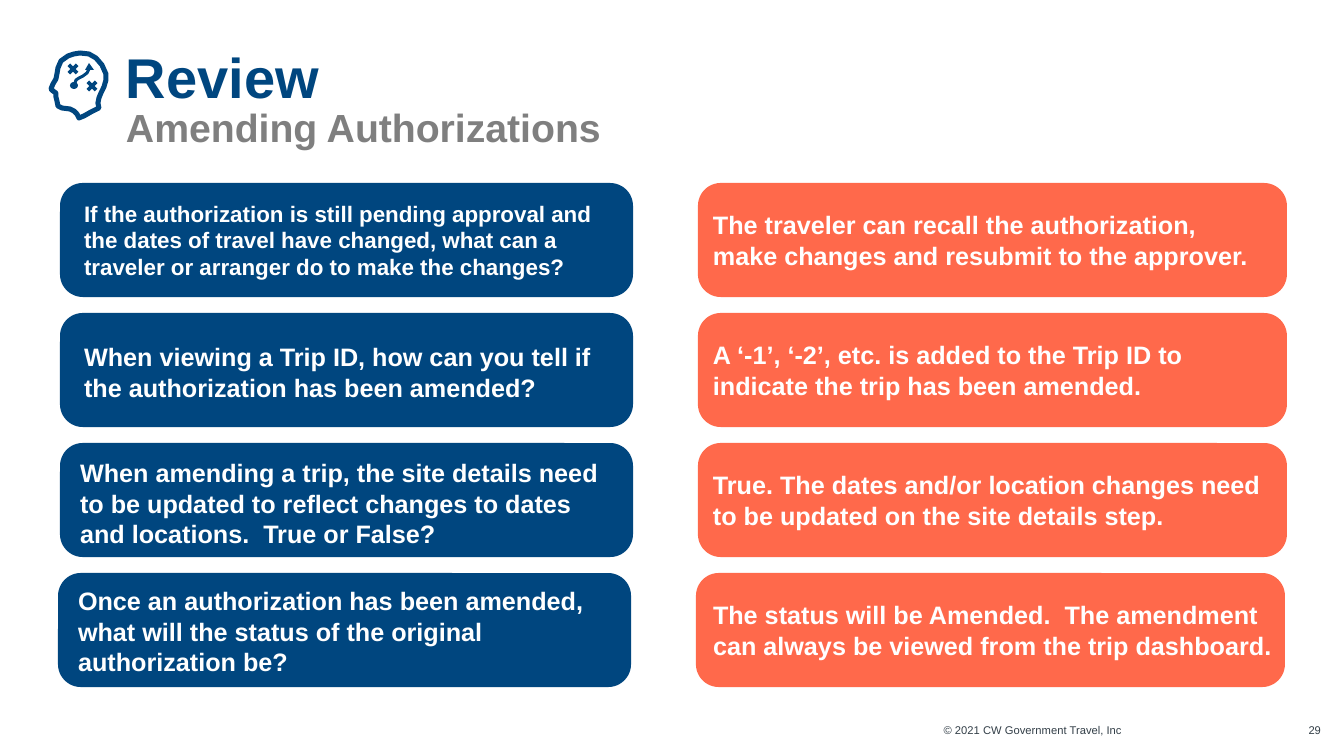
import pptx
import pptx.util
import pptx.dml.color
import pptx.enum.shapes
import pptx.enum.text

PX = 914400 / 100.8
NAVY, CORAL, GREY, SLATE, WHITE = "00467F", "FF694B", "7F7F7F", "333F48", "FFFFFF"
SHAPE = pptx.enum.shapes.MSO_SHAPE
ALIGN = pptx.enum.text.PP_ALIGN
ANCHOR = pptx.enum.text.MSO_ANCHOR

HEAD = [(57, 21), (57, 27), (55, 34), (52, 40), (50, 45), (49, 50), (50, 55),
        (42, 59), (35, 63), (30, 65), (28, 61), (25, 58), (21, 56), (13, 55),
        (9, 53), (8, 48), (7, 44), (7, 40), (4, 38), (2, 36), (4, 31), (7, 26),
        (8, 21), (9, 15), (12, 8), (19, 3), (25, 1), (31, 0), (40, 1), (47, 5),
        (53, 12)]
ROUTE = [(26, 30), (27, 27), (30, 25), (34, 23), (38, 20), (40, 16)]
ARROWHEAD = [(36, 17), (40, 10), (45, 17)]
CROSSES = [(24, 16), (43, 33)]

ROWS = [
    (0, 16, 24, 0,
     "If the authorization is still pending approval and the dates of travel "
     "have changed, what can a traveler or arranger do to make the changes?",
     ["The traveler can recall the authorization,",
      "make changes and resubmit to the approver."]),
    (0, 18, 24, 2,
     "When viewing a Trip ID, how can you tell if the authorization has been amended?",
     ["A ‘-1’, ‘-2’, etc. is added to the Trip ID to indicate the trip has been amended."]),
    (0, 18, 20, 3,
     "When amending a trip, the site details need to be updated to reflect "
     "changes to dates and locations.  True or False?",
     ["True. The dates and/or location changes need to be updated on the site details step."]),
    (-2, 18, 20, 1,
     "Once an authorization has been amended, what will the status of the "
     "original authorization be?",
     ["The status will be Amended.  The amendment can always be viewed from the trip dashboard."]),
]


def px(length):
    return pptx.util.Emu(round(length * PX))


def rgb(code):
    return pptx.dml.color.RGBColor.from_string(code)


def set_font(font, size, color, bold=False):
    font.name = "Arial"
    font.size = pptx.util.Pt(size)
    font.bold = bold
    font.color.rgb = rgb(color)


def set_margins(frame, left=0, top=0, right=0, bottom=0):
    frame.word_wrap = True
    frame.margin_left, frame.margin_top = px(left), px(top)
    frame.margin_right, frame.margin_bottom = px(right), px(bottom)


def add_filled(slide, kind, x, y, w, h, color):
    shape = slide.shapes.add_shape(kind, px(x), px(y), px(w), px(h))
    shape.shadow.inherit = False
    shape.fill.solid()
    shape.fill.fore_color.rgb = rgb(color)
    shape.line.fill.background()
    return shape


def add_outline(slide, x, y, points, close, line_width=0):
    placed = [(x + dx, y + dy) for dx, dy in points]
    builder = slide.shapes.build_freeform(*placed[0], scale=PX)
    builder.add_line_segments(placed[1:], close=close)
    outline = builder.convert_to_shape()
    outline.shadow.inherit = False
    if line_width:
        outline.fill.background()
        outline.line.color.rgb = rgb(NAVY)
        outline.line.width = px(line_width)
    else:
        outline.fill.solid()
        outline.fill.fore_color.rgb = rgb(NAVY)
        outline.line.fill.background()


def add_thinking_head(slide, x, y):
    add_outline(slide, x, y, HEAD, True, 5)
    add_outline(slide, x, y, ROUTE, False, 3)
    add_outline(slide, x, y, ARROWHEAD, True)
    add_filled(slide, SHAPE.OVAL, x + 21, y + 29, 8, 7, NAVY)
    for dx, dy in CROSSES:
        add_filled(slide, SHAPE.MATH_MULTIPLY, x + dx - 8, y + dy - 8, 16, 16, NAVY)


def add_heading(slide, x, y, w, h):
    title = slide.shapes.title
    title.left, title.top, title.width, title.height = px(x), px(y), px(w), px(h)
    frame = title.text_frame
    set_margins(frame)
    frame.auto_size = pptx.enum.text.MSO_AUTO_SIZE.NONE
    frame.vertical_anchor = ANCHOR.TOP
    heading = frame.paragraphs[0]
    heading.alignment = ALIGN.LEFT
    heading.line_spacing = 0.85
    topic = heading.add_run()
    topic.text = "Review"
    set_font(topic.font, 40, NAVY, True)
    heading.add_line_break()
    subject = heading.add_run()
    subject.text = "Amending Authorizations"
    set_font(subject.font, 28, GREY, True)


def add_card(slide, x, y, w, h, color, lines, size, indent, right=0, drop=0):
    card = add_filled(slide, SHAPE.ROUNDED_RECTANGLE, x, y, w, h, color)
    card.adjustments[0] = 0.2
    corner_inset = 0.29 * 0.2 * h
    frame = card.text_frame
    set_margins(frame, indent - corner_inset, 2 * drop, right)
    frame.vertical_anchor = ANCHOR.MIDDLE
    frame.text = "\n".join(lines)
    for line in frame.paragraphs:
        line.alignment = ALIGN.LEFT
        set_font(line.font, size, WHITE, True)


def add_review_grid(slide, x, y, pitch, height):
    for row, (shift, size, indent, drop, question, answer) in enumerate(ROWS):
        top = y + row * pitch
        add_card(slide, x + shift, top, 573, height, NAVY, [question],
                 size, indent, 10, drop)
        add_card(slide, x + 638 + shift, top, 589, height, CORAL, answer,
                 18, 15 - shift)


def add_footer_text(slide, x, y, w, h, text):
    box = slide.shapes.add_textbox(px(x), px(y), px(w), px(h))
    set_margins(box.text_frame)
    note = box.text_frame.paragraphs[0]
    note.text = text
    note.alignment = ALIGN.RIGHT
    set_font(note.font, 8, SLATE)


def main():
    deck = pptx.Presentation()
    deck.slide_width, deck.slide_height = px(1344), px(756)
    slide = deck.slides.add_slide(deck.slide_layouts[5])
    add_thinking_head(slide, 49, 53)
    add_heading(slide, 126, 53, 1162, 93)
    add_review_grid(slide, 60, 183, 130, 114)
    add_footer_text(slide, 845, 723, 277, 14, "© 2021 CW Government Travel, Inc")
    add_footer_text(slide, 1298, 723, 23, 14, "29")
    deck.save("out.pptx")


if __name__ == "__main__":
    main()
